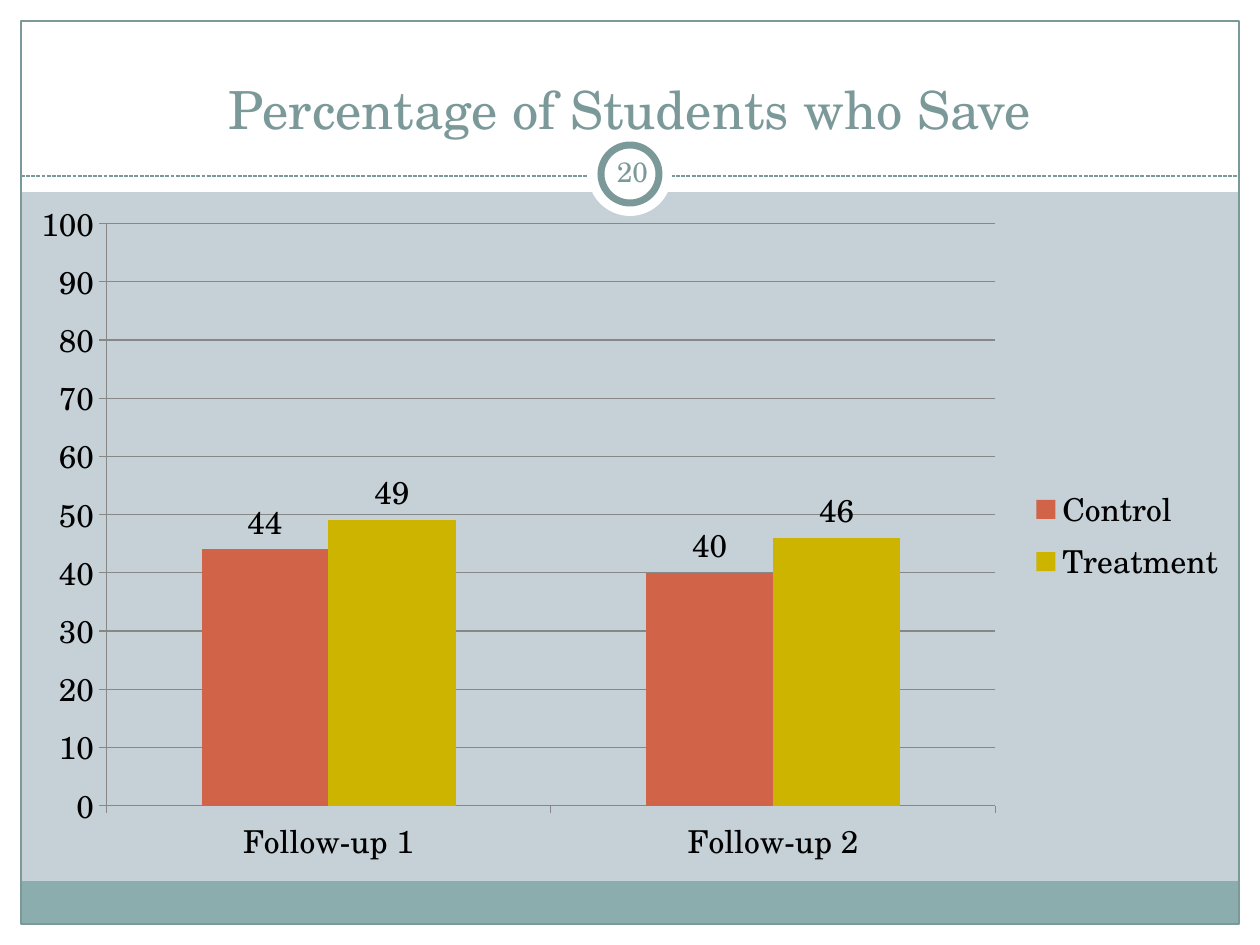
from lxml import etree
from pptx import Presentation
from pptx.chart.data import CategoryChartData
from pptx.dml.color import RGBColor
from pptx.enum.chart import XL_CHART_TYPE, XL_LABEL_POSITION, XL_LEGEND_POSITION, XL_TICK_MARK
from pptx.enum.dml import MSO_LINE
from pptx.enum.shapes import MSO_CONNECTOR, MSO_SHAPE
from pptx.enum.text import MSO_ANCHOR, PP_ALIGN
from pptx.oxml.ns import qn
from pptx.util import Pt

RECTANGLE, OVAL = MSO_SHAPE.RECTANGLE, MSO_SHAPE.OVAL
COLUMNS = XL_CHART_TYPE.COLUMN_CLUSTERED
OUTSIDE = XL_TICK_MARK.OUTSIDE

FONT = "TeX Gyre Schola"
WHITE = RGBColor(0xFF, 0xFF, 0xFF)
BLACK = RGBColor(0x00, 0x00, 0x00)
BACKGROUND = RGBColor(0xC5, 0xD1, 0xD7)
TEAL = RGBColor(0x8C, 0xAD, 0xAE)
SLATE = RGBColor(0x7C, 0x99, 0x9A)
GRID = RGBColor(0x87, 0x87, 0x87)
RED = RGBColor(0xD1, 0x63, 0x49)
GOLD = RGBColor(0xCC, 0xB4, 0x00)

PAGE_WIDTH, PAGE_HEIGHT, MARGIN = 1260, 945, 21
CATEGORIES = ["Follow-up 1", "Follow-up 2"]
SERIES = [("Control", [44, 40], RED), ("Treatment", [49, 46], GOLD)]


def px(*lengths):
    """Turn px (126 to the inch) into EMU."""
    return [round(length * 914400 / 126) for length in lengths]


def add_box(page, kind, box, fill=None, line=None, line_width=0.75):
    shape = page.shapes.add_shape(kind, *px(*box))
    shape.shadow.inherit = False
    if fill is None:
        shape.fill.background()
    else:
        shape.fill.solid()
        shape.fill.fore_color.rgb = fill
    if line is None:
        shape.line.fill.background()
    else:
        shape.line.color.rgb = line
        shape.line.width = Pt(line_width)


def add_text(page, box, text, size, anchor, inset):
    frame = page.shapes.add_textbox(*px(*box)).text_frame
    frame.word_wrap = True
    frame.vertical_anchor = anchor
    frame.margin_left, frame.margin_right, frame.margin_top, frame.margin_bottom = px(
        inset, inset, 6, 6)
    frame.text = text
    para = frame.paragraphs[0]
    para.alignment = PP_ALIGN.CENTER
    font = para.runs[0].font
    font.name, font.size, font.color.rgb = FONT, Pt(size), SLATE


def add_frame(page, box):
    """White margins and header, a teal footer band and an outline."""
    left, top, width, height = box
    inner_width, inner_height = width - 2 * MARGIN, height - 2 * MARGIN
    bottom = top + height - MARGIN
    right = left + width - MARGIN
    for strip in (
        (left, bottom, width, MARGIN),
        (left, top, width, 192),
        (left, top, MARGIN, height),
        (right, top, MARGIN, height),
    ):
        add_box(page, RECTANGLE, strip, WHITE)
    add_box(page, RECTANGLE, (left + MARGIN, bottom - 43, inner_width, 43), TEAL)
    add_box(page, RECTANGLE, (left + MARGIN, top + MARGIN, inner_width, inner_height), line=SLATE)


def add_header(page, box):
    """Dashed rule along the bottom of the box, numbered badge on it, title above."""
    left, top, width, height = box
    center, rule_y = left + width // 2, top + height
    rule = page.shapes.add_connector(
        MSO_CONNECTOR.STRAIGHT, *px(left + MARGIN, rule_y, left + width - MARGIN, rule_y))
    rule.line.color.rgb = SLATE
    rule.line.width = Pt(0.75)
    rule.line.dash_style = MSO_LINE.SQUARE_DOT
    etree.SubElement(rule._element.spPr, qn("a:effectLst"))

    badge_y = rule_y - 2
    for radius, line in ((42, None), (29, SLATE)):
        disc = (center - radius, badge_y - radius, 2 * radius, 2 * radius)
        add_box(page, OVAL, disc, WHITE, line, 4)
    add_text(page, (left, top + 42, width, 104), "Percentage of Students who Save",
             30, MSO_ANCHOR.BOTTOM, 13)
    add_text(page, (center - 29, badge_y - 33, 63, 60), "20", 16, MSO_ANCHOR.MIDDLE, 6)


def set_plot_area(chart, **fractions):
    """Fix the inner plot area as fractions (x, y, w, h) of the chart."""
    plot_area = chart._chartSpace.chart.plotArea
    for old in plot_area.findall(qn("c:layout")):
        plot_area.remove(old)
    layout = etree.Element(qn("c:layout"))
    manual = etree.SubElement(layout, qn("c:manualLayout"))
    settings = {"layoutTarget": "inner", "xMode": "edge", "yMode": "edge", **fractions}
    for name, value in settings.items():
        etree.SubElement(manual, qn(f"c:{name}")).set("val", str(value))
    plot_area.insert(0, layout)


def style_axes(chart):
    values = chart.value_axis
    values.minimum_scale, values.maximum_scale, values.major_unit = 0, 100, 10
    values.has_major_gridlines = True
    values.tick_labels.number_format = "#,##0"
    values.tick_labels.number_format_is_linked = False
    for axis in (values, chart.category_axis):
        axis.major_tick_mark = OUTSIDE
        axis.format.line.color.rgb = GRID
    values.major_gridlines.format.line.color.rgb = GRID


def add_savings_chart(page, box):
    data = CategoryChartData()
    data.categories = CATEGORIES
    for name, percentages, _ in SERIES:
        data.add_series(name, percentages)
    chart = page.shapes.add_chart(COLUMNS, *px(*box), data).chart
    chart.has_title = False
    chart.font.name, chart.font.size, chart.font.color.rgb = FONT, Pt(18), BLACK
    chart.has_legend = True
    chart.legend.position = XL_LEGEND_POSITION.RIGHT
    chart.legend.include_in_layout = False
    style_axes(chart)
    set_plot_area(chart, x=0.07, y=0.05, w=0.73, h=0.84)

    plot = chart.plots[0]
    plot.gap_width, plot.overlap, plot.vary_by_categories = 150, 0, False
    for series, (_, _, color) in zip(plot.series, SERIES):
        series.format.fill.solid()
        series.format.fill.fore_color.rgb = color
        labels = series.data_labels
        labels.show_value = True
        labels.number_format, labels.number_format_is_linked = "0", False
        labels.position = XL_LABEL_POSITION.OUTSIDE_END


def main():
    deck = Presentation()
    deck.slide_width, deck.slide_height = px(PAGE_WIDTH, PAGE_HEIGHT)
    page = deck.slides.add_slide(deck.slide_layouts[6])
    page.background.fill.solid()
    page.background.fill.fore_color.rgb = BACKGROUND
    add_frame(page, (0, 0, PAGE_WIDTH, PAGE_HEIGHT))
    add_header(page, (0, 0, PAGE_WIDTH, 176))
    add_savings_chart(page, (MARGIN, 189, PAGE_WIDTH - 2 * MARGIN, 693))
    deck.save("out.pptx")


if __name__ == "__main__":
    main()
